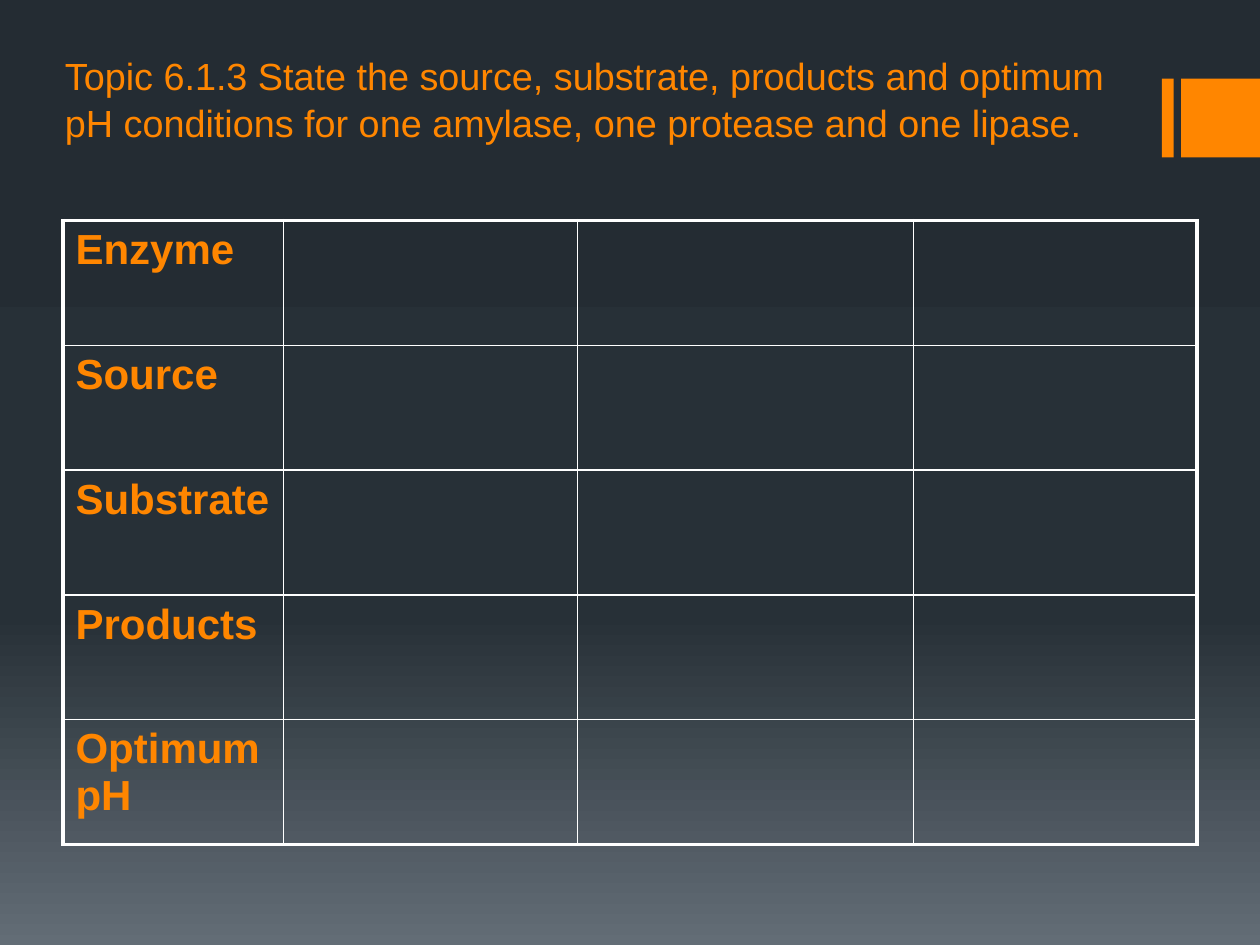
from lxml import etree
from pptx import Presentation
from pptx.dml import color
from pptx.enum import shapes, text
from pptx.oxml import parse_xml
from pptx.oxml import ns
from pptx.util import Pt

ORANGE, WHITE = "FF8600", "FFFFFF"
BACKGROUND_STOPS = [(0, "242C33"), (65, "273037"), (100, "636D76")]
ROW_LABELS = ["Enzyme", "Source", "Substrate", "Products", "Optimum pH"]
COLUMN_WIDTHS = [126, 168, 192, 162]
TITLE = ("Topic 6.1.3 State the source, substrate, products and optimum pH "
         "conditions for one amylase, one protease and one lipase.")


def rgb(value):
    return color.RGBColor.from_string(value)


def set_values(target, values):
    for name, value in values.items():
        setattr(target, name, value)


def write(para, words, **font):
    span = para.add_run()
    span.text = words
    set_values(span.font, {"name": "Arial", **font})
    span.font.color.rgb = rgb(ORANGE)


def paint_background(page):
    stops = "".join(
        f'<a:gs pos="{place * 1000}"><a:srgbClr val="{value}"/></a:gs>'
        for place, value in BACKGROUND_STOPS)
    gradient = parse_xml(
        f'<a:gradFill {ns.nsdecls("a")} rotWithShape="1"><a:gsLst>{stops}</a:gsLst>'
        '<a:lin ang="5400000" scaled="0"/></a:gradFill>')
    page.background.fill.solid()
    solid = page.background._cSld.bg.bgPr.find(ns.qn("a:solidFill"))
    solid.getparent().replace(solid, gradient)


def add_accent(page, left, top, width, height):
    # Narrow bar and a square that ends at the slide edge
    bar_width = 6.75
    for x, part_width in [(left, bar_width), (left + width - height, height)]:
        bar = page.shapes.add_shape(shapes.MSO_SHAPE.RECTANGLE, Pt(x), Pt(top),
                                    Pt(part_width), Pt(height))
        bar.shadow.inherit = False
        bar.fill.solid()
        bar.fill.fore_color.rgb = rgb(ORANGE)
        bar.line.fill.background()


def add_title(page, left, top, width, height):
    box = page.shapes.add_textbox(Pt(left), Pt(top), Pt(width), Pt(height))
    set_values(box.text_frame, {
        "word_wrap": True,
        "vertical_anchor": text.MSO_ANCHOR.TOP,
        "margin_top": Pt(5),
    })
    para = box.text_frame.paragraphs[0]
    para.line_spacing = 1.04
    write(para, TITLE, size=Pt(21.6))


def set_borders(cell, widths):
    # Border lines come before the fill in the cell properties
    properties = cell._tc.get_or_add_tcPr()
    for index, (side, width) in enumerate(widths.items()):
        line = etree.Element(ns.qn(f"a:ln{side}"), w=str(Pt(width)))
        fill = etree.SubElement(line, ns.qn("a:solidFill"))
        etree.SubElement(fill, ns.qn("a:srgbClr"), val=WHITE)
        properties.insert(index, line)


def add_enzyme_table(page, left, top, width, height):
    row_count, column_count = len(ROW_LABELS), len(COLUMN_WIDTHS)
    table = page.shapes.add_table(row_count, column_count, Pt(left), Pt(top),
                                  Pt(width), Pt(height)).table
    set_values(table, {"first_row": False, "horz_banding": False})
    for column, column_width in zip(table.columns, COLUMN_WIDTHS):
        column.width = Pt(column_width)

    # Thick outer frame, thin inner grid
    outer, inner = 2.25, 1
    for r, label in enumerate(ROW_LABELS):
        table.rows[r].height = Pt(height / row_count)
        for c in range(column_count):
            cell = table.cell(r, c)
            cell.fill.background()
            set_borders(cell, {
                "L": outer if c == 0 else inner,
                "R": outer if c == column_count - 1 else inner,
                "T": outer if r == 0 else inner,
                "B": outer if r == row_count - 1 else inner,
            })
        write(table.cell(r, 0).text_frame.paragraphs[0], label,
              size=Pt(24), bold=True)


def main():
    deck = Presentation()
    set_values(deck, {"slide_width": Pt(720), "slide_height": Pt(540)})
    page = deck.slides.add_slide(deck.slide_layouts[6])
    paint_background(page)
    add_accent(page, 664, 45, 56, 45)
    add_title(page, 30, 24, 630, 90.5)
    add_enzyme_table(page, 36, 126, sum(COLUMN_WIDTHS), 356.5)
    deck.save("out.pptx")


if __name__ == "__main__":
    main()
